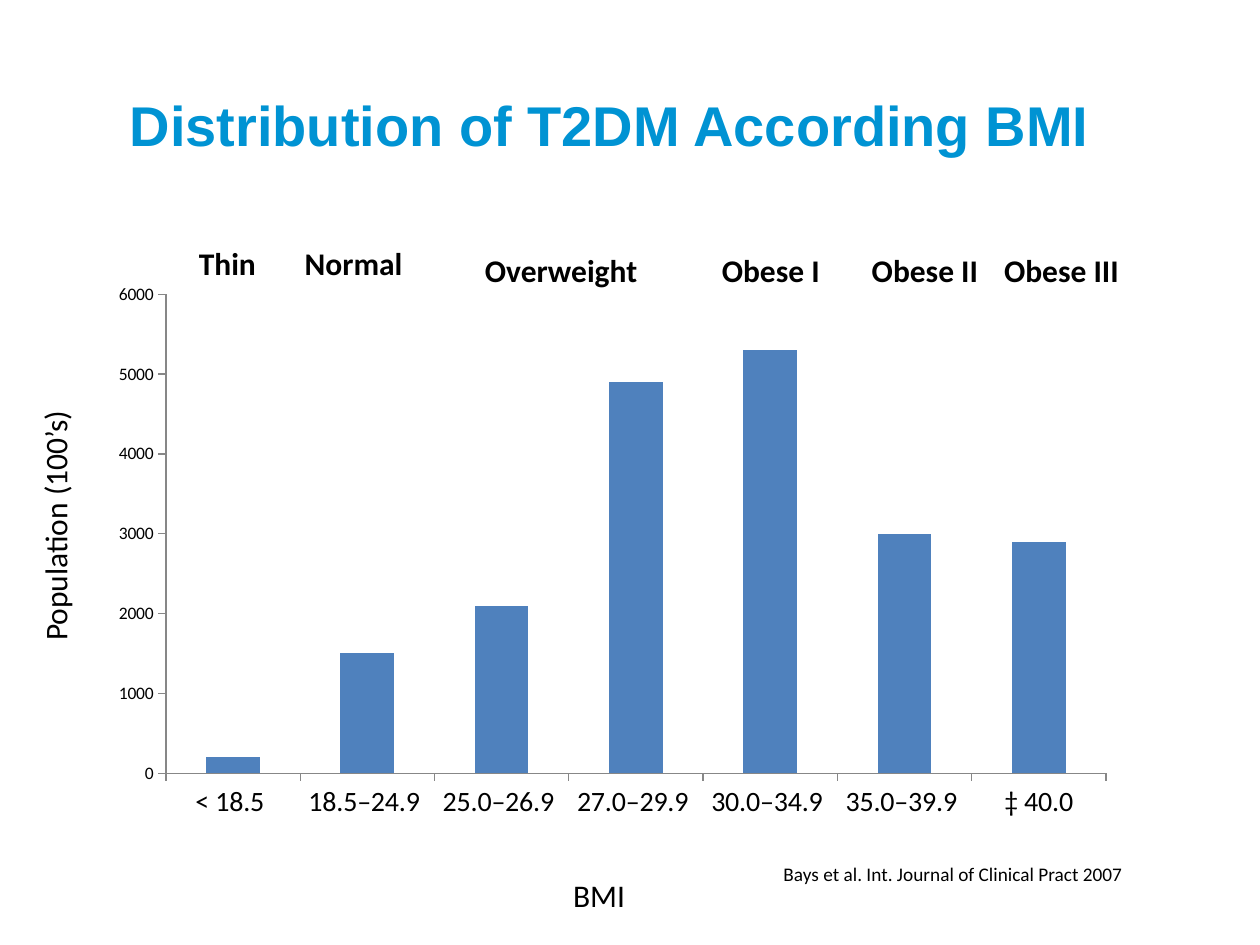
import dataclasses

import lxml.etree
import pptx
import pptx.chart.data
import pptx.dml.color
import pptx.enum.chart
import pptx.enum.text
import pptx.oxml.ns
import pptx.util


@dataclasses.dataclass(frozen=True)
class Theme:
    """Colours, fonts and type sizes of the slide."""

    title: str = "0093D3"
    ink: str = "000000"
    bar: str = "4F81BD"
    axis: str = "878787"
    heading_font: str = "Arial"
    body_font: str = "Calibri"
    title_size: int = 32
    label_size: int = 18
    category_size: int = 16
    source_size: int = 11
    chart_size: int = 10


def colour(code):
    """Turn a hex code into a colour."""
    return pptx.dml.color.RGBColor.from_string(code)


def format_font(font, size, code, name, bold=False):
    """Set size, colour, face and weight of a font."""
    font.size, font.name, font.bold = pptx.util.Pt(size), name, bold
    font.color.rgb = colour(code)


def write_text(frame, text, *, size, code, name, bold=False, centred=False):
    """Write one formatted paragraph into a text frame."""
    para = frame.paragraphs[0]
    if centred:
        para.alignment = pptx.enum.text.PP_ALIGN.CENTER
    span = para.add_run()
    span.text = text
    format_font(span.font, size, code, name, bold)


class Painter:
    """Draws elements on a page with a grid of 100 columns by 75 rows."""

    def __init__(self, deck, theme):
        """Add a blank page to the deck."""
        self.theme = theme
        self.column, self.row = deck.slide_width / 100, deck.slide_height / 75
        self.page = deck.slides.add_slide(deck.slide_layouts[6])

    def place(self, left, top, width, height):
        """Convert grid units into lengths."""
        return (round(left * self.column), round(top * self.row),
                round(width * self.column), round(height * self.row))

    def title(self, text, area):
        """Add the centred heading."""
        frame = self.page.shapes.add_textbox(*self.place(*area)).text_frame
        frame.word_wrap = True
        frame.vertical_anchor = pptx.enum.text.MSO_ANCHOR.MIDDLE
        write_text(frame, text, size=self.theme.title_size, code=self.theme.title,
                   name=self.theme.heading_font, bold=True, centred=True)

    def label(self, text, area, size=None, bold=False, wrap=False, rotation=0):
        """Add a line of body text."""
        box = self.page.shapes.add_textbox(*self.place(*area))
        box.rotation = rotation
        box.text_frame.word_wrap = wrap
        write_text(box.text_frame, text, size=size or self.theme.label_size,
                   code=self.theme.ink, name=self.theme.body_font, bold=bold)

    def columns(self, categories, values, area, plot):
        """Add a column chart whose inner plot takes the given shares."""
        theme = self.theme
        data = pptx.chart.data.CategoryChartData()
        data.categories = categories
        data.add_series("Series 1", values)
        chart = self.page.shapes.add_chart(
            pptx.enum.chart.XL_CHART_TYPE.COLUMN_CLUSTERED, *self.place(*area), data).chart
        chart.has_legend = chart.has_title = False
        format_font(chart.font, theme.chart_size, theme.ink, theme.body_font)
        bars = chart.plots[0]
        bars.gap_width, bars.vary_by_categories = 150, False
        fill = bars.series[0].format.fill
        fill.solid()
        fill.fore_color.rgb = colour(theme.bar)
        for axis in (chart.category_axis, chart.value_axis):
            axis.has_major_gridlines = False
            axis.major_tick_mark = pptx.enum.chart.XL_TICK_MARK.OUTSIDE
            axis.format.line.color.rgb = colour(theme.axis)
            axis.format.line.width = pptx.util.Pt(0.75)
        format_font(chart.category_axis.tick_labels.font, theme.category_size,
                    theme.ink, theme.body_font)
        scale = chart.value_axis
        scale.minimum_scale, scale.maximum_scale, scale.major_unit = 0, 6000, 1000
        self.fix_plot(chart, plot)

    def fix_plot(self, chart, plot):
        """Pin the inner plot area to shares of the chart."""
        name = pptx.oxml.ns.qn
        area = chart.plots[0]._element.getparent()
        for old in area.findall(name("c:layout")):
            area.remove(old)
        layout = lxml.etree.Element(name("c:layout"))
        area.insert(0, layout)
        manual = lxml.etree.SubElement(layout, name("c:manualLayout"))
        settings = {"layoutTarget": "inner", "xMode": "edge", "yMode": "edge",
                    **dict(zip("xywh", plot))}
        for tag, value in settings.items():
            lxml.etree.SubElement(manual, name(f"c:{tag}")).set("val", str(value))


def main():
    """Build and save the slide."""
    deck = pptx.Presentation()
    deck.slide_width, deck.slide_height = pptx.util.Inches(10), pptx.util.Inches(7.5)
    theme = Theme()
    painter = Painter(deck, theme)
    painter.title("Distribution of T2DM According BMI", (3.4, 3.6, 90, 12.5))
    population = {"< 18.5 ": 200, "18.5–24.9 ": 1500, "25.0–26.9 ": 2100,
                  "27.0–29.9 ": 4900, "30.0–34.9 ": 5300, "35.0–39.9 ": 3000,
                  "‡ 40.0": 2900}
    painter.columns(list(population), list(population.values()),
                    (8.3, 22.5, 81.1, 43.2), (0.06, 0.02, 0.92, 0.88))
    painter.label("Population (100’s)", (-5.9, 39.6, 20.5, 4), rotation=270)
    painter.label("BMI", (44.5, 69, 7.9, 4), wrap=True)
    groups = [("Thin", 14.8, 18.9, 6.6), ("Normal", 23.2, 18.9, 11.2),
              ("Overweight", 37.5, 19.4, 14.2), ("Obese I", 56.3, 19.4, 9.8),
              ("Obese II", 68.2, 19.4, 10.5), ("Obese III", 78.7, 19.4, 11.2)]
    for text, left, top, width in groups:
        painter.label(text, (left, top, width, 4), bold=True, wrap=text == "Normal")
    painter.label("Bays et al. Int. Journal of Clinical Pract 2007",
                  (61.2, 67.9, 31.3, 2.9), size=theme.source_size, wrap=True)
    deck.save("out.pptx")


if __name__ == "__main__":
    main()
